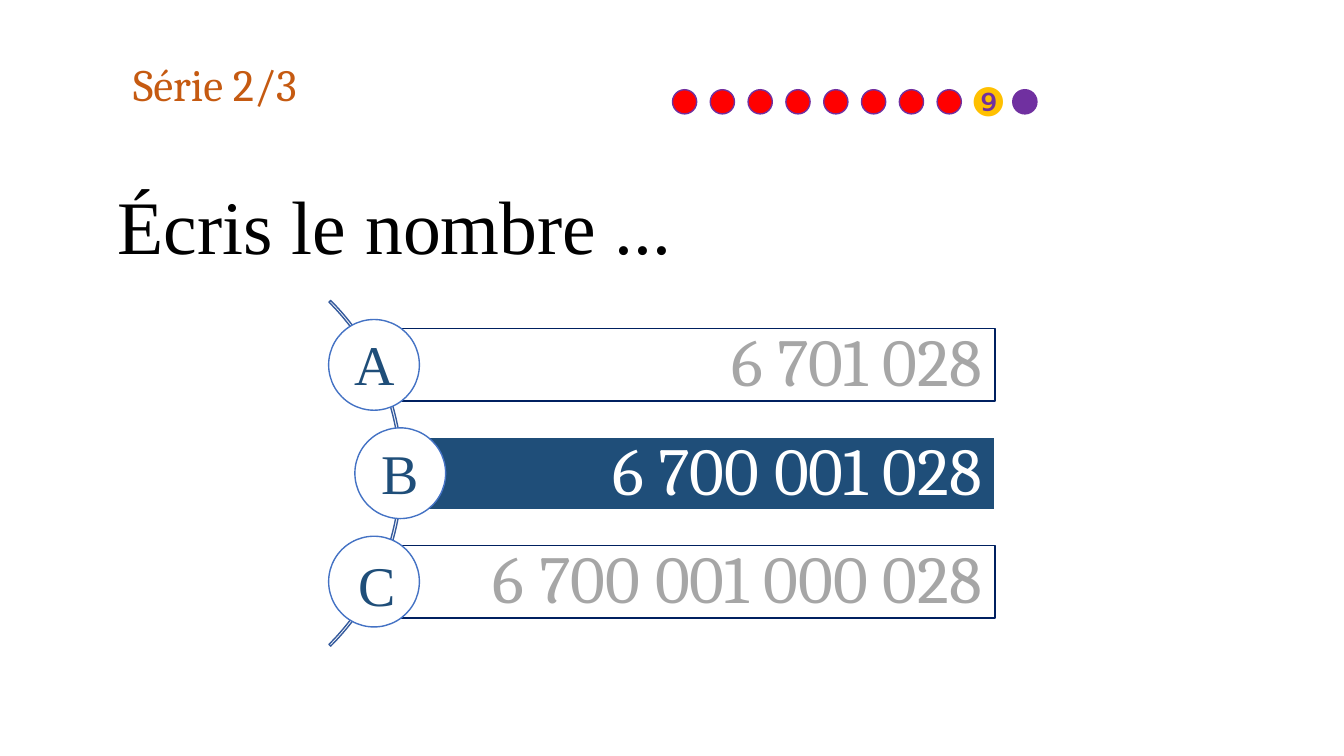
from pptx import Presentation
from pptx.dml.color import RGBColor
from pptx.enum.shapes import MSO_SHAPE as Preset
from pptx.enum.text import MSO_ANCHOR as Anchor, MSO_AUTO_SIZE as AutoSize, PP_ALIGN as Align
from pptx.util import Inches, Pt

NAVY, PURPLE, GRAY, WHITE = "1F4E79", "7030A0", "A6A6A6", "FFFFFF"
ANSWERS = [
    ("A", "6 701 028", 0, (0.16, 0.05), None, "002060", GRAY),
    ("B", "6 700 001 028", 0.26, (0.17, 0.06), NAVY, WHITE, WHITE),
    ("C", "6 700 001 000 028", 0, (0.2, 0.09), None, "002060", GRAY),
]


def color(value):
    return RGBColor.from_string(value)


def write(shape, text, font_name, size, font_color):
    paragraph = shape.text_frame.paragraphs[0]
    paragraph.text = text
    paragraph.font.name = font_name
    paragraph.font.size = Pt(size)
    paragraph.font.color.rgb = color(font_color)
    return paragraph


def add_preset(slide, preset, box, fill, line):
    shape = slide.shapes.add_shape(preset, *map(Inches, box))
    shape.shadow.inherit = False
    if fill:
        shape.fill.solid()
        shape.fill.fore_color.rgb = color(fill)
    else:
        shape.fill.background()
    shape.line.color.rgb = color(line)
    shape.line.width = Pt(1)
    return shape


def add_label(slide, box, text, font_name, size, font_color):
    label = slide.shapes.add_textbox(*map(Inches, box))
    label.text_frame.word_wrap = False
    write(label, text, font_name, size, font_color)


def add_title(slide, box, text):
    title = slide.shapes.title
    title.left, title.top, title.width, title.height = map(Inches, box)
    title.text_frame.auto_size = AutoSize.NONE
    title.text_frame.vertical_anchor = Anchor.MIDDLE
    paragraph = write(title, text, "Cambria", 32, "C55A11")
    paragraph.alignment = Align.LEFT
    paragraph.line_spacing = 0.9


def add_answer_bar(slide, box, number, fill, line, font_color):
    bar = add_preset(slide, Preset.RECTANGLE, box, fill, line)
    frame = bar.text_frame
    frame.word_wrap = True
    frame.vertical_anchor = Anchor.MIDDLE
    frame.margin_left = Inches(0.57)
    frame.margin_top = frame.margin_right = frame.margin_bottom = Inches(0.13)
    paragraph = write(bar, number, "Cambria", 48, font_color)
    paragraph.alignment = Align.RIGHT
    paragraph.line_spacing = 0.9


def add_answers(slide, left, top, width):
    arc = add_preset(slide, Preset.BLOCK_ARC, (left - 4.12, top - 0.9, 4.85, 4.85), None, "365B9D")
    for index, value in enumerate((189, 27, 0.005)):
        arc.adjustments[index] = value
    for row, (letter, number, indent, offset, fill, line, font_color) in enumerate(ANSWERS):
        x, y = left + indent, top + 1.075 * row
        bar_box = (x + 0.45, y + 0.09, width - indent - 0.45, 0.72)
        add_answer_bar(slide, bar_box, number, fill, line, font_color)
        add_preset(slide, Preset.OVAL, (x, y, 0.9, 0.9), WHITE, "4472C4")
        letter_box = (x + offset[0], y + offset[1], 0.42, 0.77)
        add_label(slide, letter_box, letter, "Times New Roman", 40, NAVY)


def add_progress(slide, left, top, count, current):
    for number in range(1, count + 1):
        x = left + 0.375 * (number - 1)
        fill = "FF0000" if number < current else PURPLE
        add_preset(slide, Preset.OVAL, (x, top, 0.24, 0.24), fill, PURPLE)
    marker_left = left + 0.375 * (current - 1) - 0.14
    add_label(slide, (marker_left, top - 0.17, 0.52, 0.57), "❾", "Arial", 28, "FFC000")


def main():
    presentation = Presentation()
    presentation.slide_width = Inches(13.33)
    presentation.slide_height = Inches(7.5)
    slide = presentation.slides.add_slide(presentation.slide_layouts[5])
    add_title(slide, (1.22, 0.59, 2.09, 0.54), "Série 2/3")
    add_answers(slide, 3.26, 3.17, 6.61)
    add_label(slide, (1.07, 1.73, 11.84, 1.01), "Écris le nombre ...", "Times New Roman", 54, "000000")
    add_progress(slide, 6.67, 0.89, 10, 9)
    presentation.save("out.pptx")


if __name__ == "__main__":
    main()
